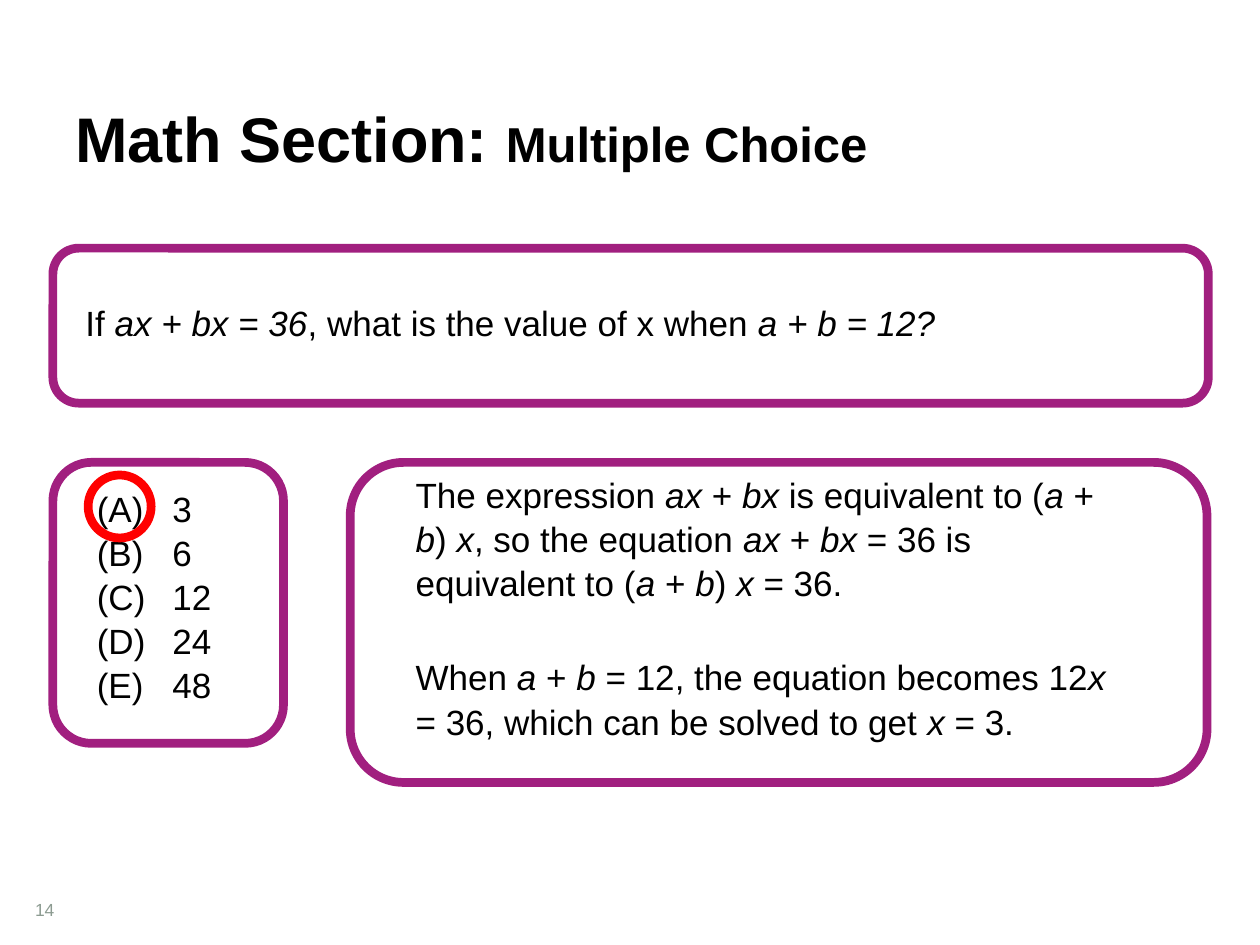
from dataclasses import dataclass

from lxml.etree import SubElement
from pptx import Presentation
from pptx.dml.color import RGBColor
from pptx.enum.shapes import MSO_SHAPE
from pptx.enum.text import MSO_ANCHOR
from pptx.oxml.ns import qn
from pptx.util import Inches, Pt


@dataclass(frozen=True)
class Theme:
    font: str = "Arial"
    black: RGBColor = RGBColor(0x00, 0x00, 0x00)
    white: RGBColor = RGBColor(0xFF, 0xFF, 0xFF)
    purple: RGBColor = RGBColor(0xA1, 0x1F, 0x7F)
    red: RGBColor = RGBColor(0xFF, 0x00, 0x00)
    grey: RGBColor = RGBColor(0x8C, 0x9B, 0x91)
    title_size: Pt = Pt(36)
    subtitle_size: Pt = Pt(28)
    body_size: Pt = Pt(20)
    number_size: Pt = Pt(10)
    outline: Pt = Pt(5)
    line_spacing: float = 1.05


THEME = Theme()


def add_text_frame(slide, box, anchor=MSO_ANCHOR.TOP):
    frame = slide.shapes.add_textbox(*map(Inches, box)).text_frame
    frame.word_wrap = True
    frame.vertical_anchor = anchor
    return frame


def style_paragraph(paragraph, size, color=THEME.black):
    paragraph.font.name = THEME.font
    paragraph.font.size = size
    paragraph.font.color.rgb = color


def add_math_text(slide, box, text):
    """Add body text in which *asterisks* enclose italic expressions."""
    paragraph = add_text_frame(slide, box).paragraphs[0]
    paragraph.line_spacing = THEME.line_spacing
    style_paragraph(paragraph, THEME.body_size)
    for index, part in enumerate(text.split("*")):
        if part:
            run = paragraph.add_run()
            run.text = part
            run.font.italic = index % 2 == 1


def add_outlined_shape(slide, kind, box, color):
    shape = slide.shapes.add_shape(kind, *map(Inches, box))
    shape.shadow.inherit = False
    shape.fill.background()
    shape.line.color.rgb = color
    shape.line.width = THEME.outline
    return shape


def add_panel(slide, box):
    panel = add_outlined_shape(slide, MSO_SHAPE.ROUNDED_RECTANGLE, box, THEME.purple)
    panel.fill.solid()
    panel.fill.fore_color.rgb = THEME.white


def add_title(slide, box, title, subtitle):
    paragraph = add_text_frame(slide, box, MSO_ANCHOR.BOTTOM).paragraphs[0]
    style_paragraph(paragraph, THEME.title_size)
    paragraph.font.bold = True
    paragraph.add_run().text = title
    run = paragraph.add_run()
    run.text = subtitle
    run.font.size = THEME.subtitle_size


def add_question(slide, box, text):
    left, top, width, _ = box
    add_panel(slide, box)
    add_math_text(slide, (left + 0.16, top + 0.36, width - 0.34, 0.44), text)


def add_explanation(slide, box, steps):
    """Add a panel of steps, each given as (offset from the top, height, text)."""
    left, top, width, _ = box
    add_panel(slide, box)
    for offset, height, text in steps:
        add_math_text(slide, (left + 0.42, top + offset, width - 0.91, height), text)


def add_choices(slide, box, choices):
    """Add lettered choices with a ring around the first, the correct one."""
    left, top, width, _ = box
    add_panel(slide, box)
    frame = add_text_frame(slide, (left + 0.25, top + 0.13, width - 0.25, 1.78))
    for index, choice in enumerate(choices):
        paragraph = frame.add_paragraph() if index else frame.paragraphs[0]
        paragraph.text = choice
        paragraph.line_spacing = THEME.line_spacing
        properties = paragraph._p.get_or_add_pPr()
        properties.set("marL", str(Inches(0.6)))
        properties.set("indent", str(Inches(-0.6)))
        SubElement(properties, qn("a:buFont"), typeface=THEME.font)
        SubElement(properties, qn("a:buAutoNum"), type="alphaUcParenBoth")
        style_paragraph(paragraph, THEME.body_size)
    ring = (left + 0.28, top + 0.1, 0.5, 0.5)
    add_outlined_shape(slide, MSO_SHAPE.OVAL, ring, THEME.red)


def add_slide_number(slide, box, number):
    paragraph = add_text_frame(slide, box, MSO_ANCHOR.BOTTOM).paragraphs[0]
    paragraph.text = str(number)
    style_paragraph(paragraph, THEME.number_size, THEME.grey)


def main():
    presentation = Presentation()
    presentation.slide_width = Inches(10)
    presentation.slide_height = Inches(7.5)
    slide = presentation.slides.add_slide(presentation.slide_layouts[6])

    add_slide_number(slide, (0.18, 6.95, 0.64, 0.4), 14)
    add_title(slide, (0.5, 0.38, 9, 1.06), "Math Section: ", "Multiple Choice")
    add_question(
        slide,
        (0.42, 1.97, 9.17, 1.23),
        "If *ax + bx = 36*, what is the value of x when *a + b = 12?*",
    )
    add_explanation(
        slide,
        (2.78, 3.67, 6.8, 2.54),
        [
            (0.02, 1.11,
             "The expression *ax* + *bx* is equivalent to (*a* + *b*) *x*, "
             "so the equation *ax* + *bx* = 36 is equivalent to "
             "(*a* + *b*) *x* = 36."),
            (1.47, 0.77,
             "When *a* + *b* = 12, the equation becomes 12*x* = 36, "
             "which can be solved to get *x* = 3."),
        ],
    )
    add_choices(slide, (0.42, 3.67, 1.83, 2.23), ["3", "6", "12", "24", "48"])

    presentation.save("out.pptx")


if __name__ == "__main__":
    main()
